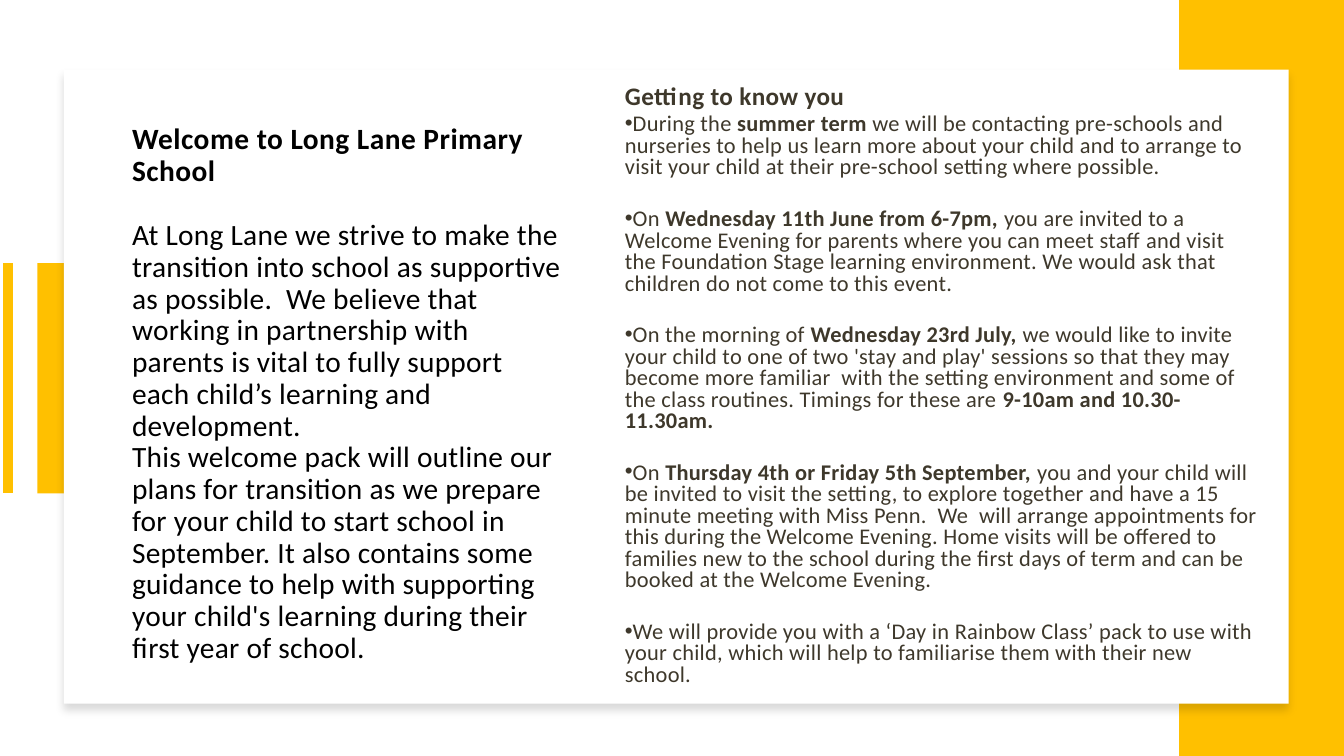
import pptx
import pptx.util
import pptx.dml.color
import pptx.enum.shapes
import pptx.enum.text
import pptx.oxml
import lxml.etree

Inches = pptx.util.Inches
Pt = pptx.util.Pt
COLORS = {"gold": "FFC000", "card": "FFFFFF", "title": "000000", "body": "3E382B"}
FONT = "Calibri"
DRAWING = "http://schemas.openxmlformats.org/drawingml/2006/main"

WELCOME = [
    ("Welcome to Long Lane Primary School", True, 0.7, 0),
    ("At Long Lane we strive to make the transition into school as supportive as possible.  "
     "We believe that working in partnership with parents is vital to fully support each "
     "child’s learning and development.", False, 0.4, 46),
    ("This welcome pack will outline our plans for transition as we prepare for your child to "
     "start school in September. It also contains some guidance to help with supporting your "
     "child's learning during their first year of school.", False, 0.4, 0),
]
HEADING = "Getting to know you"
EVENTS = [
    [("During the ", False), ("summer term", True),
     (" we will be contacting pre-schools and nurseries to help us learn more about your child "
      "and to arrange to visit your child at their pre-school setting where possible.", False)],
    [("On ", False), ("Wednesday 11th June from 6-7pm, ", True),
     ("you are invited to a Welcome Evening for parents where you can meet staff and visit the "
      "Foundation Stage learning environment. We would ask that children do not come to this "
      "event.", False)],
    [("On the morning of ", False), ("Wednesday 23rd July, ", True),
     ("we would like to invite your child to one of two 'stay and play' sessions so that they "
      "may become more familiar  with the setting environment and some of the class routines. "
      "Timings for these are ", False), ("9-10am and 10.30-11.30am.", True)],
    [("On ", False), ("Thursday 4th or Friday 5th September, ", True),
     ("you and your child will be invited to visit the setting, to explore together and have a "
      "15 minute meeting with Miss Penn.  We  will arrange appointments for this during the "
      "Welcome Evening. Home visits will be offered to families new to the school during the "
      "first days of term and can be booked at the Welcome Evening.", False)],
    [("We will provide you with a ‘Day in Rainbow Class’ pack to use with your child, which "
      "will help to familiarise them with their new school.", False)],
]


def rgb(name):
    return pptx.dml.color.RGBColor.from_string(COLORS[name])


def add_panel(page, left, top, width, height, color):
    panel = page.shapes.add_shape(pptx.enum.shapes.MSO_SHAPE.RECTANGLE, Inches(left),
                                  Inches(top), Inches(width), Inches(height))
    panel.shadow.inherit = False
    panel.fill.solid()
    panel.fill.fore_color.rgb = rgb(color)
    panel.line.fill.background()
    return panel


def add_left_accent(page, left, top, width, height):
    bar = 0.68
    add_panel(page, left + width - bar, top, bar, height, "gold")
    stripe = page.shapes.add_connector(pptx.enum.shapes.MSO_CONNECTOR.STRAIGHT, Inches(left),
                                       Inches(top), Inches(left), Inches(top + height))
    stripe.line.color.rgb = rgb("gold")
    stripe.line.width = Pt(14)
    lxml.etree.SubElement(stripe.element.spPr, f"{{{DRAWING}}}effectLst")


def add_card(page, left, top, width, height):
    card = add_panel(page, left, top, width, height, "card")
    effects = card.element.spPr.find(f"{{{DRAWING}}}effectLst")
    effects.append(pptx.oxml.parse_xml(
        f'<a:outerShdw xmlns:a="{DRAWING}" blurRad="{Pt(11)}" dist="{Pt(10)}" dir="5400000" '
        'algn="t" rotWithShape="0"><a:srgbClr val="000000"><a:alpha val="15000"/>'
        '</a:srgbClr></a:outerShdw>'))


def place_text(page, box, left, top, width, height):
    page.shapes.element.append(box.element)
    box.left, box.top = Inches(left), Inches(top)
    box.width, box.height = Inches(width), Inches(height)
    frame = box.text_frame
    frame.word_wrap = True
    frame.auto_size = pptx.enum.text.MSO_AUTO_SIZE.NONE
    frame.vertical_anchor = pptx.enum.text.MSO_ANCHOR.MIDDLE
    return frame


def set_paragraph(para, spacing, before, bullet=False):
    para.alignment = pptx.enum.text.PP_ALIGN.LEFT
    para.line_spacing = spacing
    para.space_before = Pt(before)
    para.space_after = Pt(0)
    properties = para._p.get_or_add_pPr()
    properties.set("marL", "0")
    properties.set("indent", str(-Inches(0.25)) if bullet else "0")
    if bullet:
        font = lxml.etree.SubElement(properties, f"{{{DRAWING}}}buFont")
        font.set("typeface", "Arial")
        lxml.etree.SubElement(properties, f"{{{DRAWING}}}buChar").set("char", "•")
    else:
        lxml.etree.SubElement(properties, f"{{{DRAWING}}}buNone")


def add_span(para, text, size, color, bold, tracking):
    span = para.add_run()
    span.text = text
    span.font.name = FONT
    span.font.size = Pt(size)
    span.font.bold = bold
    span.font.color.rgb = rgb(color)
    span.font._element.set("spc", str(round(tracking * 100)))


def fill_welcome(page, left, top, width, height):
    frame = place_text(page, page.shapes.title, left, top, width, height)
    for index, (text, bold, tracking, before) in enumerate(WELCOME):
        para = frame.add_paragraph() if index else frame.paragraphs[0]
        set_paragraph(para, 0.9, before)
        add_span(para, text, 42, "title", bold, tracking)


def fill_events(page, left, top, width, height):
    frame = place_text(page, page.placeholders[1], left, top, width, height)
    heading = frame.paragraphs[0]
    set_paragraph(heading, 0.8, 0)
    add_span(heading, HEADING, 36, "body", True, 0.5)
    for index, event in enumerate(EVENTS):
        para = frame.add_paragraph()
        set_paragraph(para, 0.8, 43 if index else 6, bullet=True)
        for text, bold in event:
            add_span(para, text, 32, "body", bold, 0.4)


def main():
    deck = pptx.Presentation()
    deck.slide_width, deck.slide_height = Inches(26.67), Inches(15)
    page = deck.slides.add_slide(deck.slide_layouts[1])
    add_left_accent(page, 0.16, 5.22, 1.26, 4.57)
    add_panel(page, 23.4, 0, 3.27, 15, "gold")
    add_card(page, 1.27, 1.38, 24.3, 12.58)
    fill_welcome(page, 2.52, 2.71, 8.77, 10.24)
    fill_events(page, 12.3, 1.41, 12.84, 12.52)
    deck.save("out.pptx")


if __name__ == "__main__":
    main()
